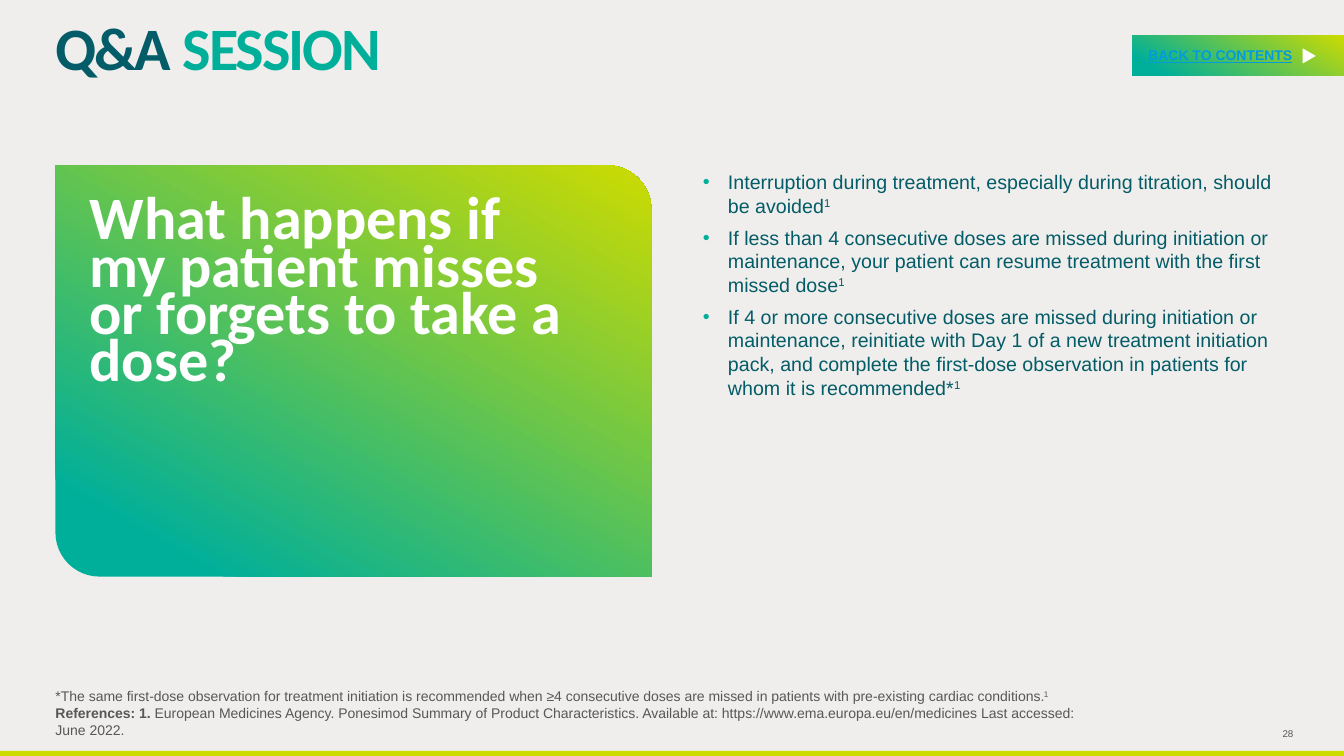
from lxml import etree
from pptx import Presentation
from pptx.dml.color import RGBColor
from pptx.enum.shapes import MSO_SHAPE as Shape
from pptx.enum.text import MSO_ANCHOR as Anchor, MSO_AUTO_SIZE as AutoSize, PP_ALIGN as Align
from pptx.oxml.ns import qn
from pptx.util import Inches, Pt

TEAL, DARK, LIME, GREY, WHITE = "00AF9A", "035C67", "CDDB00", "575756", "FFFFFF"


def color(hex_string):
    return RGBColor.from_string(hex_string)


def set_up(box, place, insets=(0, 0, 0, 0), anchor=Anchor.TOP):
    """Place a text-bearing shape and return its text frame."""
    box.left, box.top, box.width, box.height = map(Inches, place)
    frame = box.text_frame
    frame.word_wrap = True
    frame.auto_size = AutoSize.NONE
    frame.vertical_anchor = anchor
    (frame.margin_left, frame.margin_top,
     frame.margin_right, frame.margin_bottom) = map(Inches, insets)
    return frame


deck = Presentation()
deck.slide_width, deck.slide_height = Inches(13.33), Inches(7.5)
page = deck.slides.add_slide(deck.slide_layouts[1])
page.background.fill.solid()
page.background.fill.fore_color.rgb = color("EFEEEC")
shapes = page.shapes

# Bottom stripe and button arrow
for kind, place, fill, turn in [
    (Shape.RECTANGLE, (0, 7.45, 13.33, 0.05), LIME, 0),
    (Shape.ISOSCELES_TRIANGLE, (12.91, 0.49, 0.15, 0.13), WHITE, 90),
]:
    mark = shapes.add_shape(kind, *map(Inches, place))
    mark.shadow.inherit = False
    mark.fill.solid()
    mark.fill.fore_color.rgb = color(fill)
    mark.line.fill.background()
    mark.rotation = turn
arrow = mark

# Gradient panels: contents button and question card
panels = []
for place, corner in [((11.23, 0.35, 2.1, 0.4), 0), ((0.55, 1.64, 5.91, 4.08), 0.107)]:
    panel = shapes.add_shape(Shape.ROUND_2_DIAG_RECTANGLE, *map(Inches, place))
    panel.shadow.inherit = False
    panel.adjustments[0], panel.adjustments[1] = 0, corner
    panel.line.fill.background()
    panel.fill.gradient()
    panel.fill.gradient_angle = 60
    for stop, position, tone in zip(panel.fill.gradient_stops, (0.12, 1), (TEAL, LIME)):
        stop.position = position
        stop.color.rgb = color(tone)
    panels.append(panel)
button = panels[0]
button._element.addnext(arrow._element)

frame = set_up(button, (11.23, 0.35, 2.1, 0.4), (0.16, 0.05, 0.1, 0.05), Anchor.MIDDLE)
para = frame.paragraphs[0]
para.text = "BACK TO CONTENTS"
para.alignment = Align.LEFT
para.font.name, para.font.size = "Arial", Pt(10)
para.font.bold = para.font.underline = True
para.font.color.rgb = color("029CDD")

# Title
frame = set_up(shapes.title, (0.55, 0.24, 12.23, 1.42), (0, 0.05, 0, 0))
para = frame.paragraphs[0]
para.alignment = Align.LEFT
para.line_spacing = Pt(38)
para.font.name, para.font.size, para.font.bold = "Calibri", Pt(43), True
for words, tone in [("Q&A ", DARK), ("SESSION", TEAL)]:
    span = para.add_run()
    span.text = words
    span.font.color.rgb = color(tone)
    span.font._element.set("spc", "-150")

# Question on the card
box = shapes.add_textbox(0, 0, 0, 0)
frame = set_up(box, (0.79, 1.98, 5.07, 2.25), (0.1, 0.05, 0.1, 0.05))
para = frame.paragraphs[0]
para.text = "What happens if my patient misses or forgets to take a dose?"
para.line_spacing = Pt(33.8)
para.font.name, para.font.size, para.font.bold = "Calibri", Pt(43), True
para.font.color.rgb = color(WHITE)

# Answer list, each point ending in a raised reference number
answers = [
    "Interruption during treatment, especially during titration, should be avoided",
    "If less than 4 consecutive doses are missed during initiation or maintenance, "
    "your patient can resume treatment with the first missed dose",
    "If 4 or more consecutive doses are missed during initiation or maintenance, "
    "reinitiate with Day 1 of a new treatment initiation pack, and complete the "
    "first-dose observation in patients for whom it is recommended*",
]
frame = set_up(page.placeholders[1], (6.87, 1.64, 5.91, 3.83), (0.1, 0.05, 0.1, 0.05))
for index, answer in enumerate(answers):
    para = frame.add_paragraph() if index else frame.paragraphs[0]
    props = para._p.get_or_add_pPr()
    props.set("marL", str(Inches(0.25)))
    props.set("indent", str(Inches(-0.25)))
    bullet_color = etree.SubElement(props, qn("a:buClr"))
    etree.SubElement(bullet_color, qn("a:srgbClr"), val=TEAL)
    etree.SubElement(props, qn("a:buFont"), typeface="Arial")
    etree.SubElement(props, qn("a:buChar"), char="•")
    para.space_before, para.space_after = Pt(0), Pt(6)
    para.font.name, para.font.size = "Arial", Pt(14)
    para.font.color.rgb = color(DARK)
    para.add_run().text = answer
    span = para.add_run()
    span.text = "1"
    span.font._element.set("baseline", "30000")

# Footnote and references
box = shapes.add_textbox(0, 0, 0, 0)
frame = set_up(box, (0.55, 6.28, 10.38, 1.04), anchor=Anchor.BOTTOM)
note, references = frame.paragraphs[0], frame.add_paragraph()
for para in (note, references):
    para.font.name, para.font.size = "Arial", Pt(10)
    para.font.color.rgb = color(GREY)
note.add_run().text = (
    "*The same first-dose observation for treatment initiation is recommended when "
    "≥4 consecutive doses are missed in patients with pre-existing cardiac conditions.")
span = note.add_run()
span.text = "1"
span.font._element.set("baseline", "30000")
span = references.add_run()
span.text = "References: 1. "
span.font.bold = True
references.add_run().text = (
    "European Medicines Agency. Ponesimod Summary of Product Characteristics. Available at: "
    "https://www.ema.europa.eu/en/medicines Last accessed: June 2022.")

# Page number
box = shapes.add_textbox(0, 0, 0, 0)
frame = set_up(box, (12.72, 7.18, 0.48, 0.2), anchor=Anchor.MIDDLE)
para = frame.paragraphs[0]
para.text = "28"
para.font.name, para.font.size = "Arial", Pt(7)
para.font.color.rgb = color(GREY)

deck.save("out.pptx")
